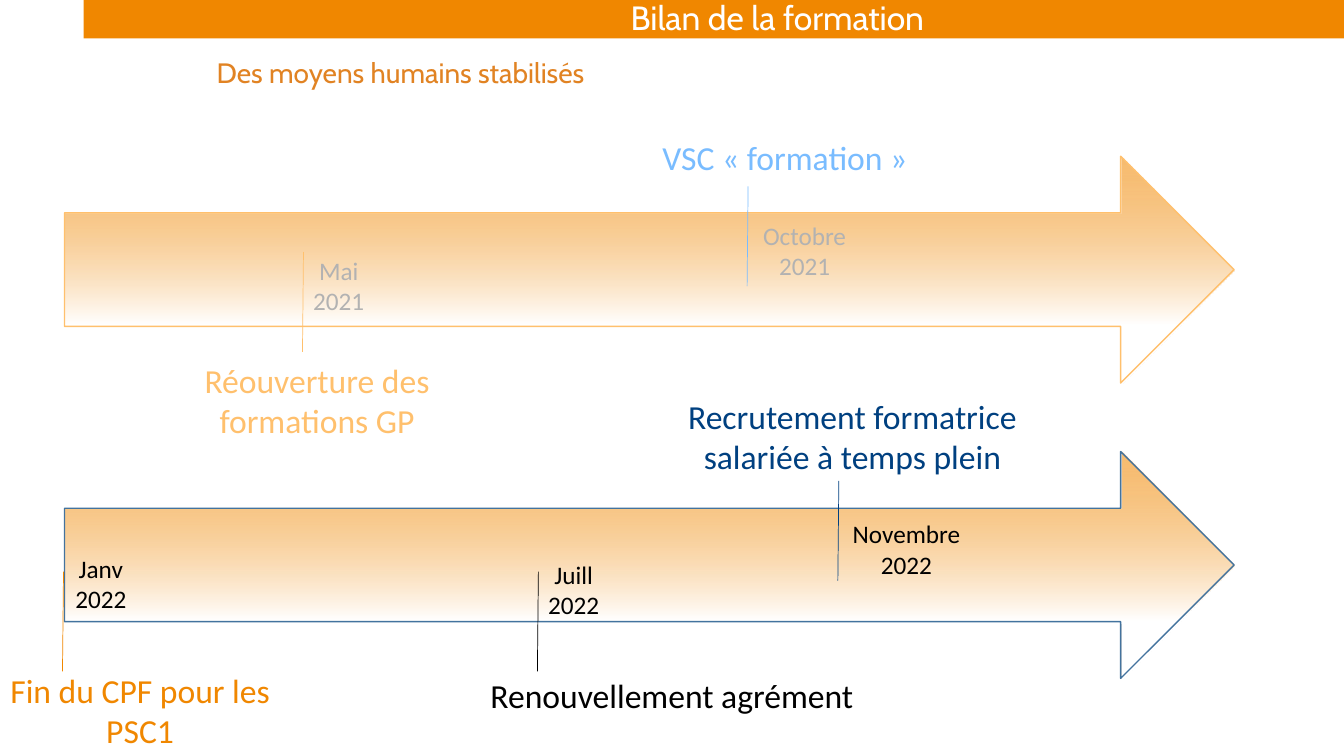
from lxml import etree
from pptx import Presentation
from pptx.dml.color import RGBColor
from pptx.enum import shapes, text
from pptx.oxml.ns import qn
from pptx.util import Inches, Pt

ORANGE = RGBColor(0xF0, 0x87, 0x00)
SUBTITLE_ORANGE = RGBColor(0xE1, 0x83, 0x23)
PALE_ORANGE = RGBColor(0xFF, 0xC0, 0x6D)
PALE_BLUE = RGBColor(0x79, 0xBC, 0xFF)
STEEL_BLUE = RGBColor(0x43, 0x73, 0x9E)
NAVY = RGBColor(0x00, 0x40, 0x80)
GREY = RGBColor(0xB2, 0xB2, 0xB2)
BLACK = RGBColor(0x00, 0x00, 0x00)
WHITE = RGBColor(0xFF, 0xFF, 0xFF)

TICK_HEIGHT = 0.99
TICK_SLANT = 0.01
DATE_HEIGHT = 0.55

# Arrow top, outline colour
YEAR_ARROWS = [(1.55, PALE_ORANGE), (4.48, STEEL_BLUE)]

# Date, its box (left, top, width) and colour; event, its box
# (left, top, width, height) and colour; top end of the tick
MILESTONES = [
    ("Mai 2021", (2.89, 2.56, 0.94), GREY,
     "Réouverture des formations GP", (1.91, 3.52, 2.47, 0.89), PALE_ORANGE, (3.01, 2.5)),
    ("Octobre 2021", (7.46, 2.21, 1.04), GREY,
     "VSC « formation »", (6.34, 1.11, 2.89, 0.89), PALE_BLUE, (7.42, 1.85)),
    ("Janv 2022", (0.53, 5.51, 0.94), BLACK,
     "Fin du CPF pour les PSC1", (-0.24, 6.55, 3.26, 0.99), ORANGE, (0.63, 5.67)),
    ("Novembre 2022", (8.28, 5.17, 1.42), BLACK,
     "Recrutement formatrice salariée à temps plein", (6.72, 3.88, 3.47, 0.89), NAVY,
     (8.32, 4.77)),
    ("Juill 2022", (5.22, 5.57, 0.94), BLACK,
     "Renouvellement agrément", (4.75, 6.67, 3.83, 0.46), BLACK, (5.34, 5.67)),
]


def write_text(shape, content, size, color, font="Calibri",
               align=text.PP_ALIGN.CENTER, line_spacing=None):
    frame = shape.text_frame
    frame.text = content
    frame.word_wrap = True
    frame.auto_size = text.MSO_AUTO_SIZE.NONE
    frame.vertical_anchor = text.MSO_ANCHOR.MIDDLE
    paragraph = frame.paragraphs[0]
    paragraph.alignment = align
    paragraph.line_spacing = line_spacing
    for run in paragraph.runs:
        run.font.name = font
        run.font.size = Pt(size)
        run.font.color.rgb = color


def add_text(slide, content, box, size, color, **style):
    shape = slide.shapes.add_textbox(*map(Inches, box))
    write_text(shape, content, size, color, **style)


def add_title_banner(slide):
    title = slide.shapes.title
    title.left, title.top = Inches(2.21), Inches(0)
    title.width, title.height = Inches(11), Inches(0.38)
    write_text(title, "Bilan de la formation", 24, WHITE, font="Cabin", line_spacing=0.9)

    banner = slide.shapes.add_shape(shapes.MSO_SHAPE.RECTANGLE, Inches(0.83), Inches(0),
                                    Inches(12.5), Inches(0.38))
    banner.shadow.inherit = False
    banner.fill.solid()
    banner.fill.fore_color.rgb = ORANGE
    banner.line.fill.background()
    title.element.addprevious(banner.element)


def add_year_arrow(slide, top, outline):
    """Add a wide arrow that fades from translucent orange down to white."""
    arrow = slide.shapes.add_shape(shapes.MSO_SHAPE.RIGHT_ARROW, Inches(0.64), Inches(top),
                                   Inches(11.6), Inches(2.25))
    arrow.shadow.inherit = False
    arrow.line.color.rgb = outline
    arrow.line.width = Pt(1)
    arrow.fill.gradient()
    arrow.fill.gradient_angle = 270
    start, end = arrow.fill.gradient_stops
    start.position, start.color.rgb = 0, ORANGE
    end.position, end.color.rgb = 0.74, WHITE
    first_color = next(arrow.element.iter(qn("a:srgbClr")))
    etree.SubElement(first_color, qn("a:alpha"), val="56000")


def add_tick(slide, x, y, color):
    tick = slide.shapes.add_connector(shapes.MSO_CONNECTOR.STRAIGHT, Inches(x), Inches(y),
                                      Inches(x - TICK_SLANT), Inches(y + TICK_HEIGHT))
    tick.line.color.rgb = color
    tick.line.width = Pt(0.5)
    etree.SubElement(tick.element.spPr, qn("a:effectLst"))


def main():
    presentation = Presentation()
    presentation.slide_width = Inches(13.33)
    presentation.slide_height = Inches(7.5)
    slide = presentation.slides.add_slide(presentation.slide_layouts.get_by_name("Title Only"))

    add_title_banner(slide)
    add_text(slide, "Des moyens humains stabilisés", (2.05, 0.54, 8.51, 0.4), 20,
             SUBTITLE_ORANGE, font="Cabin", align=text.PP_ALIGN.LEFT, line_spacing=0.9)
    for top, outline in YEAR_ARROWS:
        add_year_arrow(slide, top, outline)
    for date, date_box, date_color, event, event_box, event_color, tick_top in MILESTONES:
        add_text(slide, date, (*date_box, DATE_HEIGHT), 18, date_color)
        add_tick(slide, *tick_top, event_color)
        add_text(slide, event, event_box, 24, event_color)

    presentation.save("out.pptx")


if __name__ == "__main__":
    main()
